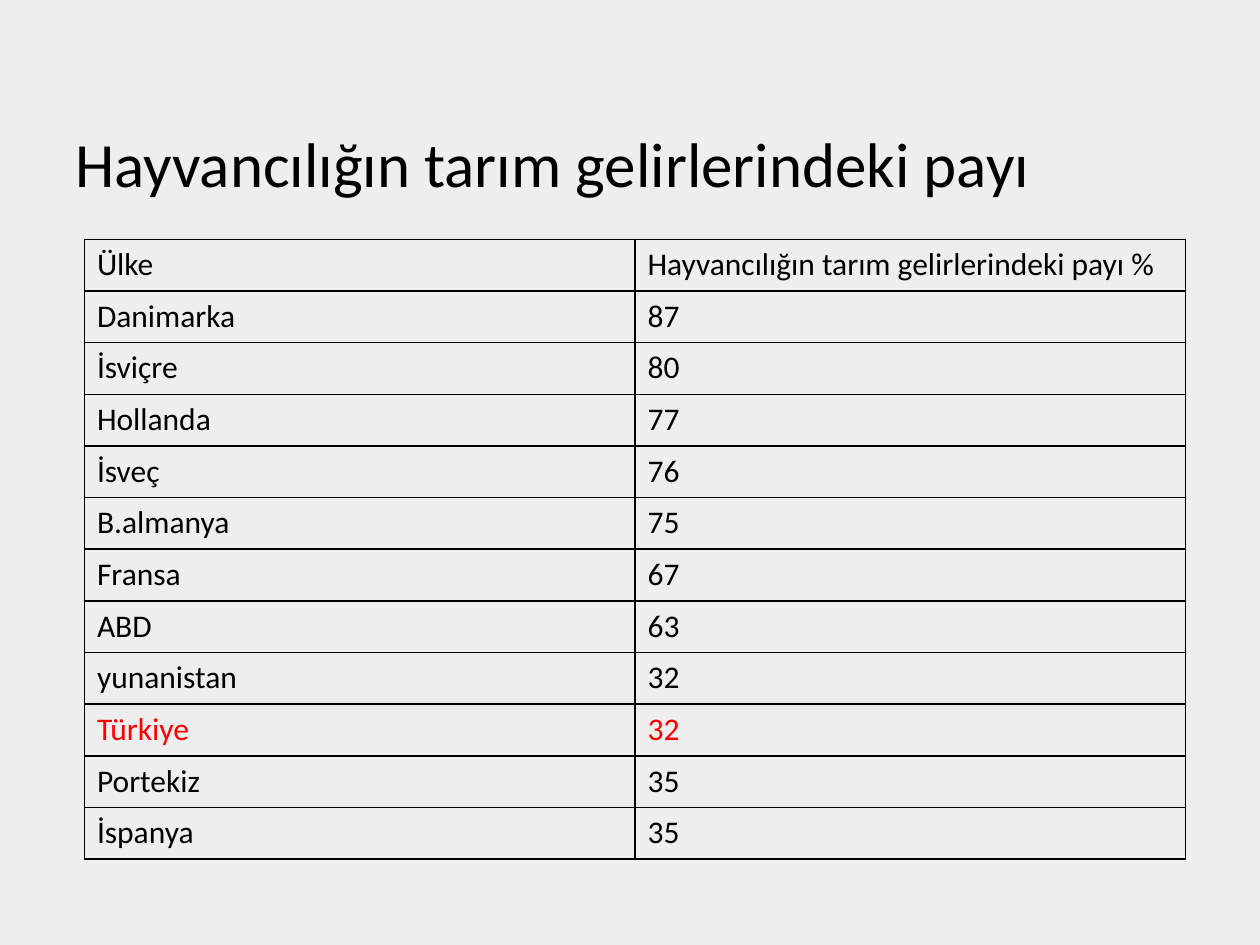
"""Build a slide with a table of livestock's share of farm income by country."""
import pptx
import pptx.dml.color
import pptx.enum.text
import pptx.util
from lxml import etree
from pptx.util import Inches, Pt

TITLE = "Hayvancılığın tarım gelirlerindeki payı"
HEADER = ("Ülke", "Hayvancılığın tarım gelirlerindeki payı %")
SHARES = [
    ("Danimarka", 87),
    ("İsviçre", 80),
    ("Hollanda", 77),
    ("İsveç", 76),
    ("B.almanya", 75),
    ("Fransa", 67),
    ("ABD", 63),
    ("yunanistan", 32),
    ("Türkiye", 32),
    ("Portekiz", 35),
    ("İspanya", 35),
]
HIGHLIGHTED = "Türkiye"

FONT = "Calibri"
BACKGROUND = pptx.dml.color.RGBColor(0xEE, 0xEE, 0xEE)
BLACK = pptx.dml.color.RGBColor(0, 0, 0)
RED = pptx.dml.color.RGBColor(0xFF, 0, 0)
TABLE_WIDTH = 8.74
ROW_HEIGHT = 0.41
DRAWING = "http://schemas.openxmlformats.org/drawingml/2006/main"


def write(text_frame, text, size, color):
    paragraph = text_frame.paragraphs[0]
    paragraph.text = text
    font = paragraph.runs[0].font
    font.name, font.size = FONT, Pt(size)
    font.color.rgb = color


def add_borders(cell):
    properties = cell._tc.get_or_add_tcPr()
    for position, side in enumerate(("lnL", "lnR", "lnT", "lnB")):
        line = etree.Element(f"{{{DRAWING}}}{side}", w=str(Pt(1)))
        fill = etree.SubElement(line, f"{{{DRAWING}}}solidFill")
        etree.SubElement(fill, f"{{{DRAWING}}}srgbClr", val=str(BLACK))
        properties.insert(position, line)


def add_title(slide):
    title = slide.shapes.add_textbox(Inches(0.5), Inches(0.39), Inches(9), Inches(1.25))
    title.text_frame.word_wrap = True
    title.text_frame.vertical_anchor = pptx.enum.text.MSO_ANCHOR.BOTTOM
    write(title.text_frame, TITLE, 36, BLACK)


def add_share_table(slide):
    rows = [HEADER, *SHARES]
    table = slide.shapes.add_table(
        len(rows), len(HEADER), Inches(0.67), Inches(1.9),
        Inches(TABLE_WIDTH), Inches(ROW_HEIGHT * len(rows)),
    ).table
    table.first_row = table.horz_banding = False
    for row, values in zip(table.rows, rows):
        color = RED if values[0] == HIGHLIGHTED else BLACK
        for cell, value in zip(row.cells, values):
            write(cell.text_frame, str(value), 18, color)
            cell.fill.background()
            add_borders(cell)


def main():
    presentation = pptx.Presentation()
    presentation.slide_width, presentation.slide_height = Inches(10), Inches(7.5)
    slide = presentation.slides.add_slide(presentation.slide_layouts[6])
    slide.background.fill.solid()
    slide.background.fill.fore_color.rgb = BACKGROUND
    add_title(slide)
    add_share_table(slide)
    presentation.save("out.pptx")


if __name__ == "__main__":
    main()
